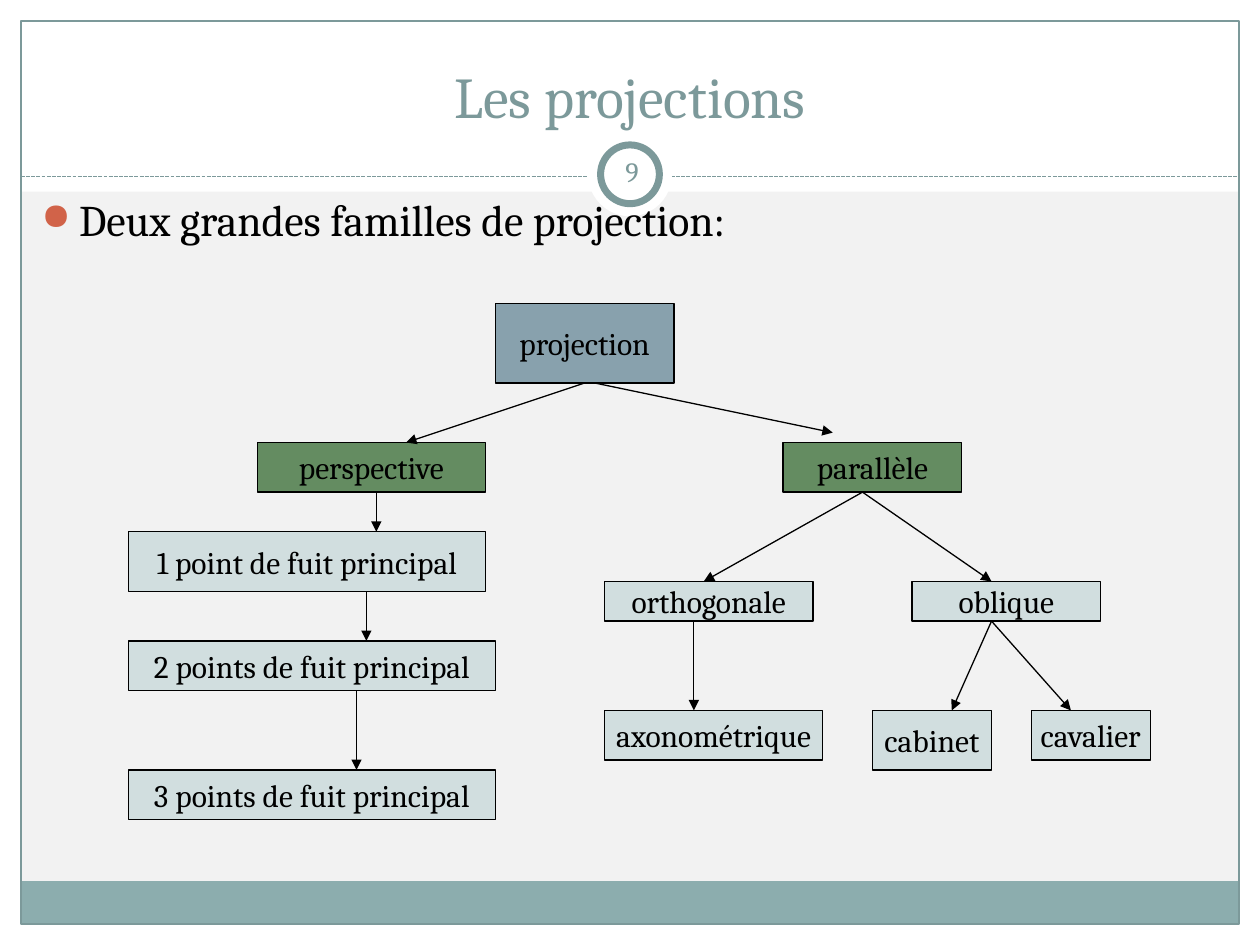
import pptx
import pptx.util
import pptx.dml.color
import pptx.enum.dml
import pptx.enum.shapes
import pptx.enum.text
import pptx.oxml.ns
from lxml import etree

Pt = pptx.util.Pt
Kind = pptx.enum.shapes.MSO_SHAPE
Align = pptx.enum.text.PP_ALIGN
Anchor = pptx.enum.text.MSO_ANCHOR
qn = pptx.oxml.ns.qn

HUES = {
    "ground": "F2F2F2", "white": "FFFFFF", "black": "000000",
    "teal": "7C999A", "band": "8CADAE", "dot": "D16349",
    "root": "88A1AD", "branch": "648C61", "leaf": "D1DEDF",
}
WIDE, HIGH = 720, 540
EDGE = 12
UNIT = 5.67  # grid step of the tree

# Tree boxes in grid units: text, left, top, width, height, colour
NODES = [
    ("projection", 37, 0, 18, 8, "root"),
    ("perspective", 13, 14, 23, 5, "branch"),
    ("parallèle", 66, 14, 18, 5, "branch"),
    ("1 point de fuit principal", 0, 23, 36, 6, "leaf"),
    ("2 points de fuit principal", 0, 34, 37, 5, "leaf"),
    ("3 points de fuit principal", 0, 47, 37, 5, "leaf"),
    ("orthogonale", 48, 28, 21, 4, "leaf"),
    ("oblique", 79, 28, 19, 4, "leaf"),
    ("axonométrique", 48, 41, 22, 5, "leaf"),
    ("cabinet", 75, 41, 12, 6, "leaf"),
    ("cavalier", 91, 41, 12, 5, "leaf"),
]
# Arrows in grid units: from x, from y, to x, to y
LINKS = [
    (47, 8, 71, 13), (46, 8, 28, 14),
    (25, 19, 25, 23), (24, 29, 24, 34), (23, 39, 23, 47),
    (74, 19, 58, 28), (74, 19, 87, 28),
    (57, 32, 57, 41), (87, 32, 83, 41), (87, 32, 95, 41),
]


def tint(name):
    return pptx.dml.color.RGBColor.from_string(HUES[name])


def add_box(slide, box, fill=None, line=None, width=0.75, kind=Kind.RECTANGLE):
    shape = slide.shapes.add_shape(kind, *map(Pt, box))
    shape.shadow.inherit = False
    if fill:
        shape.fill.solid()
        shape.fill.fore_color.rgb = tint(fill)
    else:
        shape.fill.background()
    if line:
        shape.line.color.rgb = tint(line)
        shape.line.width = Pt(width)
    else:
        shape.line.fill.background()
    return shape


def add_line(slide, ends, hue):
    line = slide.shapes.add_connector(
        pptx.enum.shapes.MSO_CONNECTOR.STRAIGHT, *map(Pt, ends))
    line.line.color.rgb = tint(hue)
    line.line.width = Pt(0.75)
    etree.SubElement(line._element.spPr, qn("a:effectLst"))
    return line


def set_text(shape, text, size, hue, anchor, align=Align.CENTER, wrap=True):
    frame = shape.text_frame
    frame.word_wrap = wrap
    frame.vertical_anchor = anchor
    para = frame.paragraphs[0]
    para.alignment = align
    run = para.add_run()
    run.text = text
    run.font.name = "Cambria"
    run.font.size = Pt(size)
    run.font.color.rgb = tint(hue)
    return para


def add_text(slide, box, *style):
    shape = slide.shapes.add_textbox(*map(Pt, box))
    return set_text(shape, *style)


def draw_frame(slide, wide, high):
    # White margins, with a tall header
    inner = wide - 2 * EDGE
    for box in [(0, high - EDGE, wide, EDGE), (0, 0, wide, 109.5),
                (0, 0, EDGE, high), (wide - EDGE, 0, EDGE, high)]:
        add_box(slide, box, "white")
    # Footer band, outline and dashed rule
    add_box(slide, (EDGE, 503.5, inner, 24.5), "band")
    add_box(slide, (EDGE, EDGE, inner, high - 2 * EDGE), None, "teal")
    rule = add_line(slide, (EDGE, 100.8, wide - EDGE, 100.8), "teal")
    rule.line.dash_style = pptx.enum.dml.MSO_LINE.SQUARE_DOT


def draw_badge(slide, x, y, size):
    add_box(slide, (x, y, size, size), "white", kind=Kind.OVAL)
    gap = 7.2
    ring = size - 2 * gap
    add_box(slide, (x + gap, y + gap, ring, ring), "white", "teal", 4, Kind.OVAL)
    add_text(slide, (x + gap, y + 5, 36, 34.5), "9", 16, "teal", Anchor.MIDDLE)


def draw_point(slide, box):
    para = add_text(slide, box, "Deux grandes familles de projection:", 25,
                    "black", Anchor.TOP, Align.LEFT)
    props = para._p.get_or_add_pPr()
    props.set("marL", str(Pt(21.6)))
    props.set("indent", str(-Pt(21.6)))
    paint = etree.SubElement(props, qn("a:buClr"))
    etree.SubElement(paint, qn("a:srgbClr"), val=HUES["dot"])
    etree.SubElement(props, qn("a:buSzPct"), val="85000")
    etree.SubElement(props, qn("a:buChar"), char="●")


def draw_tree(slide, x, y):
    for text, left, top, wide, high, hue in NODES:
        box = (x + left * UNIT, y + top * UNIT, wide * UNIT, high * UNIT)
        shape = add_box(slide, box, hue, "black")
        set_text(shape, text, 18, "black", Anchor.MIDDLE, wrap=False)
    for ax, ay, bx, by in LINKS:
        ends = (x + ax * UNIT, y + ay * UNIT, x + bx * UNIT, y + by * UNIT)
        link = add_line(slide, ends, "black")
        etree.SubElement(link.line._get_or_add_ln(), qn("a:tailEnd"),
                         type="triangle")


def main():
    deck = pptx.Presentation()
    deck.slide_width, deck.slide_height = Pt(WIDE), Pt(HIGH)
    slide = deck.slides.add_slide(deck.slide_layouts[6])
    slide.background.fill.solid()
    slide.background.fill.fore_color.rgb = tint("ground")
    draw_frame(slide, WIDE, HIGH)
    draw_badge(slide, 336, 75.6, 48)
    add_text(slide, (24, 18, 672, 60), "Les projections", 33, "teal",
             Anchor.BOTTOM)
    draw_point(slide, (16.5, 106.5, 686, 34))
    draw_tree(slide, 73.3, 173.5)
    deck.save("out.pptx")


if __name__ == "__main__":
    main()
